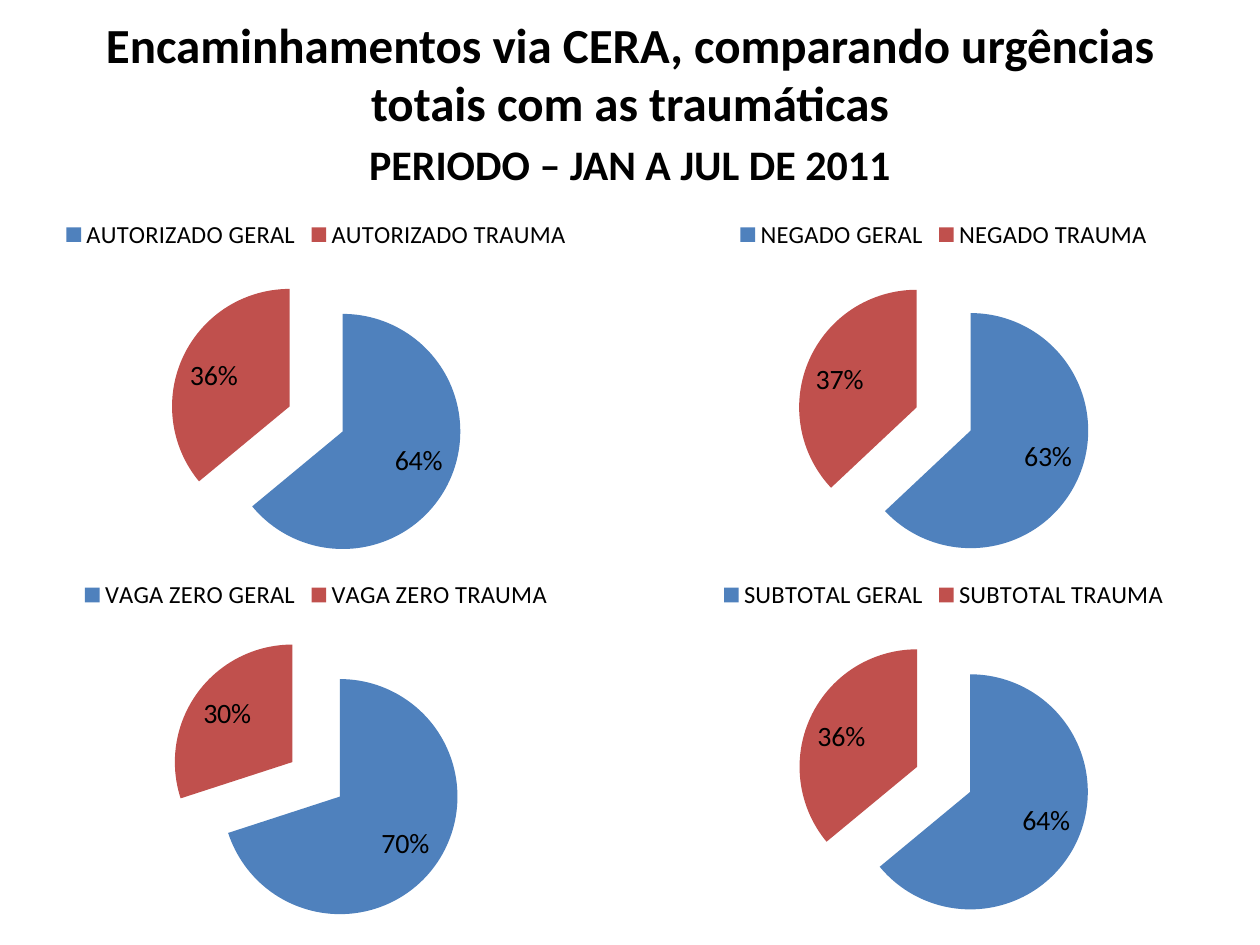
from lxml import etree
from pptx import Presentation
from pptx import util as u
from pptx.chart.data import CategoryChartData
from pptx.dml.color import RGBColor
from pptx.enum import chart as charts, text
from pptx.oxml import ns

FONT = "Calibri"
COLORS = {"text": "000000", "general": "4F81BD", "trauma": "C0504D"}
TITLE_LINES = [
    ("Encaminhamentos via CERA, comparando urgências totais com as traumáticas", 28),
    ("PERIODO – JAN A JUL DE 2011", 24),
]
REFERRALS = [
    ("AUTORIZADO", 64, 36),
    ("NEGADO", 63, 37),
    ("VAGA ZERO", 70, 30),
    ("SUBTOTAL", 64, 36),
]
COLUMN_LEFTS = (0.01, 4.99)
ROW_TOPS = (1.63, 4.49)


def style_font(font, size, bold=False):
    font.name = FONT
    font.size = u.Pt(size)
    font.bold = bold
    font.color.rgb = RGBColor.from_string(COLORS["text"])


def add_title(slide):
    box = slide.shapes.add_textbox(u.Inches(0.5), u.Inches(0.3), u.Inches(9), u.Inches(1.25))
    frame = box.text_frame
    frame.word_wrap = True
    frame.vertical_anchor = text.MSO_ANCHOR.BOTTOM
    frame.text = "\n".join(line for line, size in TITLE_LINES)
    for paragraph, (line, size) in zip(frame.paragraphs, TITLE_LINES):
        paragraph.alignment = text.PP_ALIGN.CENTER
        style_font(paragraph.runs[0].font, size, bold=True)
    frame.paragraphs[1].space_before = u.Pt(4)


def explode(series, percent):
    explosion = etree.Element(ns.qn("c:explosion"), val=str(percent))
    series._element.get_or_add_spPr().addnext(explosion)


def add_pie(slide, left, top, name, general, trauma):
    data = CategoryChartData()
    data.categories = [f"{name} GERAL", f"{name} TRAUMA"]
    data.add_series("Series 1", (general, trauma))
    chart = slide.shapes.add_chart(
        charts.XL_CHART_TYPE.PIE, u.Inches(left), u.Inches(top), u.Inches(5), u.Inches(3), data
    ).chart
    chart.has_title = False
    style_font(chart.font, 10)
    chart.has_legend = True
    chart.legend.position = charts.XL_LEGEND_POSITION.TOP
    chart.legend.include_in_layout = False
    style_font(chart.legend.font, 14)

    plot = chart.plots[0]
    plot.vary_by_categories = True
    series = plot.series[0]
    explode(series, 25)
    for index, key in enumerate(("general", "trauma")):
        fill = series.points[index].format.fill
        fill.solid()
        fill.fore_color.rgb = RGBColor.from_string(COLORS[key])

    labels = series.data_labels
    labels.show_percentage = True
    labels.show_value = False
    labels.number_format = "0%"
    labels.number_format_is_linked = False
    labels.position = charts.XL_LABEL_POSITION.INSIDE_END
    style_font(labels.font, 16)


def main():
    presentation = Presentation()
    presentation.slide_width = u.Inches(10)
    presentation.slide_height = u.Inches(7.5)
    slide = presentation.slides.add_slide(presentation.slide_layouts[6])
    add_title(slide)
    for index, referral in enumerate(REFERRALS):
        row, column = divmod(index, len(COLUMN_LEFTS))
        add_pie(slide, COLUMN_LEFTS[column], ROW_TOPS[row], *referral)
    presentation.save("out.pptx")


if __name__ == "__main__":
    main()
